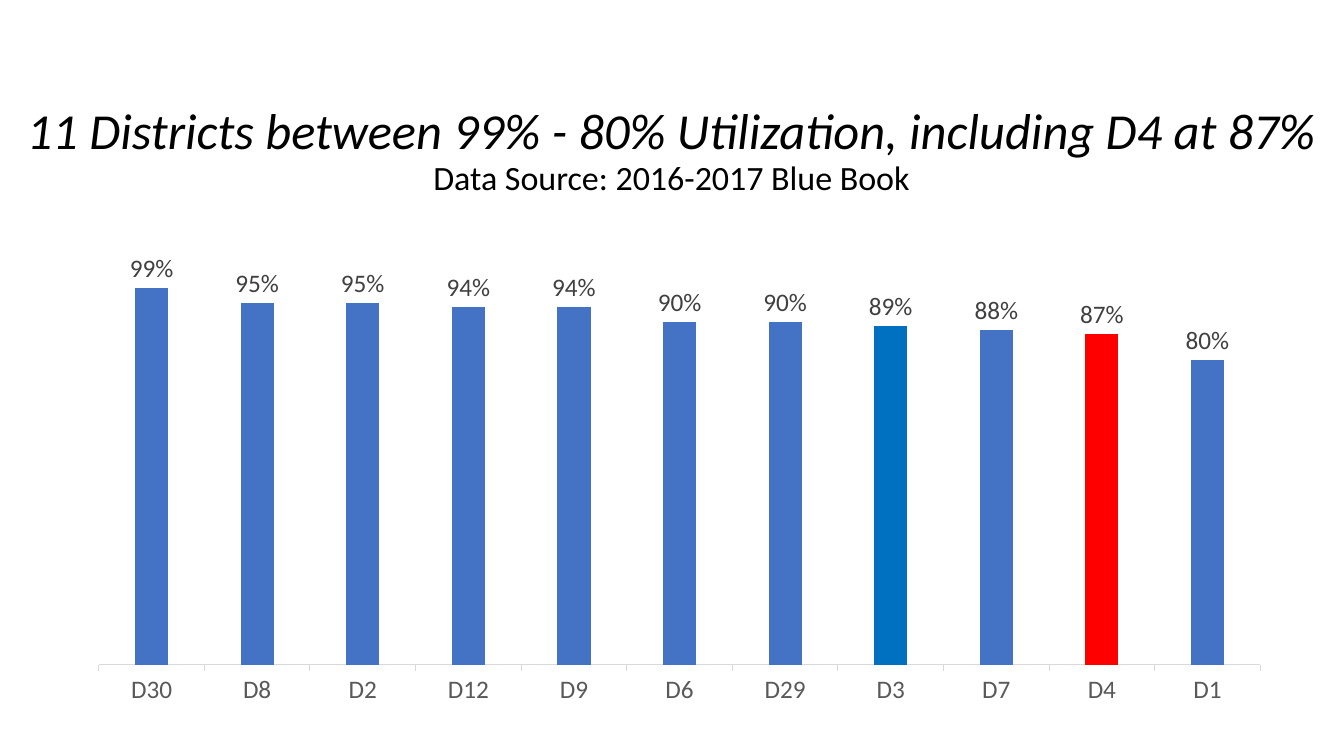
from pptx import Presentation
from pptx.chart.data import CategoryChartData
from pptx.dml.color import RGBColor
from pptx.enum.chart import XL_CHART_TYPE, XL_LABEL_POSITION, XL_TICK_MARK
from pptx.enum.text import MSO_ANCHOR, PP_ALIGN
from pptx.util import Inches, Pt

COLUMN = XL_CHART_TYPE.COLUMN_CLUSTERED
OUTSIDE_END = XL_LABEL_POSITION.OUTSIDE_END
TICK_OUTSIDE = XL_TICK_MARK.OUTSIDE
BOTTOM = MSO_ANCHOR.BOTTOM
CENTER = PP_ALIGN.CENTER
TITLE_ONLY = 5

FONT = "Calibri"
BLACK = RGBColor(0x00, 0x00, 0x00)
LABEL_GREY = RGBColor(0x40, 0x40, 0x40)
AXIS_GREY = RGBColor(0x59, 0x59, 0x59)
LINE_GREY = RGBColor(0xD9, 0xD9, 0xD9)
BLUE = RGBColor(0x44, 0x72, 0xC4)
BRIGHT_BLUE = RGBColor(0x00, 0x70, 0xC0)
RED = RGBColor(0xFF, 0x00, 0x00)

UTILIZATION = {
    "D30": 0.99, "D8": 0.95, "D2": 0.95, "D12": 0.94, "D9": 0.94, "D6": 0.90,
    "D29": 0.90, "D3": 0.89, "D7": 0.88, "D4": 0.87, "D1": 0.80,
}
HIGHLIGHTS = {"D3": BRIGHT_BLUE, "D4": RED}


def style_font(font, size, color):
    font.name = FONT
    font.size = Pt(size)
    font.color.rgb = color


def fill_solid(part, color):
    part.format.fill.solid()
    part.format.fill.fore_color.rgb = color


def add_title_run(paragraph, text, size, italic):
    run = paragraph.add_run()
    run.text = text
    style_font(run.font, size, BLACK)
    run.font.italic = italic


def set_title(slide):
    title = slide.shapes.title
    title.left, title.top = Inches(0.1), Inches(0.51)
    title.width, title.height = Inches(13.12), Inches(1.45)
    frame = title.text_frame
    frame.word_wrap = True
    frame.vertical_anchor = BOTTOM
    frame.margin_bottom = 0
    headline = frame.paragraphs[0]
    headline.alignment = CENTER
    headline.line_spacing = 0.9
    add_title_run(headline, "11 Districts between 99% - 80% Utilization, including D4 at 87%", 36, True)
    headline.add_line_break()
    add_title_run(headline, "Data Source: 2016-2017 Blue Book", 24.3, False)


def style_axes(chart):
    districts = chart.category_axis
    districts.major_tick_mark = TICK_OUTSIDE
    districts.format.line.color.rgb = LINE_GREY
    districts.format.line.width = Pt(0.75)
    style_font(districts.tick_labels.font, 18, AXIS_GREY)

    percent = chart.value_axis
    percent.minimum_scale, percent.maximum_scale = 0, 1.2
    percent.has_major_gridlines = False
    percent.visible = False


def add_utilization_chart(slide):
    data = CategoryChartData(number_format="0%")
    data.categories = list(UTILIZATION)
    data.add_series("Series 1", list(UTILIZATION.values()))
    chart = slide.shapes.add_chart(
        COLUMN, Inches(0.74), Inches(1.96), Inches(12), Inches(5.14), data
    ).chart
    chart.has_legend = False
    chart.has_title = False
    style_font(chart.font, 10, BLACK)
    style_axes(chart)

    # Columns, with two districts highlighted
    plot = chart.plots[0]
    plot.vary_by_categories = False
    plot.gap_width = 219
    plot.overlap = -27
    columns = plot.series[0]
    fill_solid(columns, BLUE)
    for index, district in enumerate(UTILIZATION):
        if district in HIGHLIGHTS:
            fill_solid(columns.points[index], HIGHLIGHTS[district])

    # Percentages above the columns
    labels = columns.data_labels
    labels.show_value = True
    labels.position = OUTSIDE_END
    labels.number_format = "0%"
    labels.number_format_is_linked = False
    style_font(labels.font, 18, LABEL_GREY)


def main():
    deck = Presentation()
    deck.slide_width, deck.slide_height = Inches(13.33), Inches(7.5)
    slide = deck.slides.add_slide(deck.slide_layouts[TITLE_ONLY])
    set_title(slide)
    add_utilization_chart(slide)
    deck.save("out.pptx")


if __name__ == "__main__":
    main()
